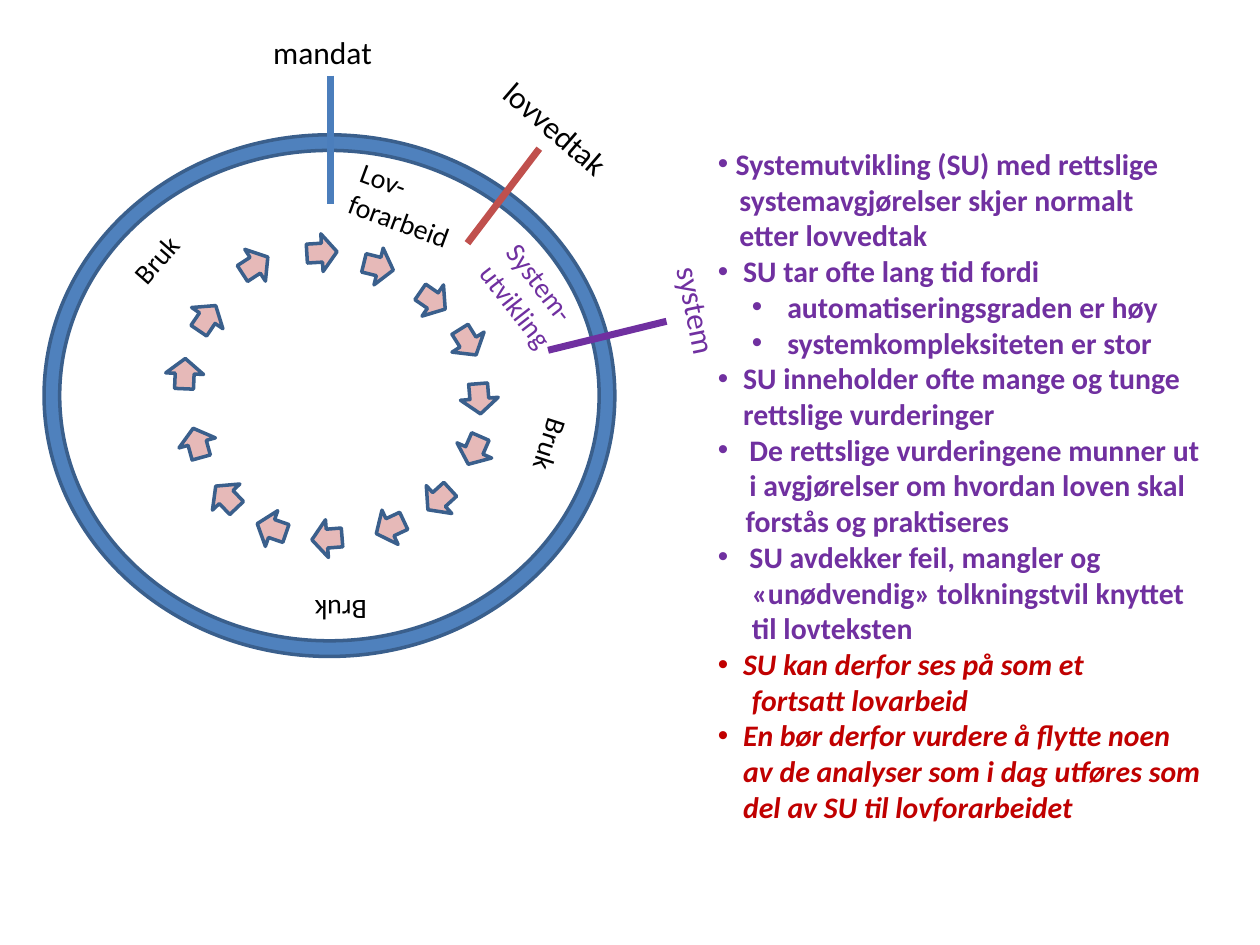
from lxml.etree import SubElement as Sub
from pptx import Presentation
from pptx.dml.color import RGBColor as Rgb
from pptx.enum.shapes import MSO_CONNECTOR as Link, MSO_SHAPE as Kind
from pptx.enum.text import MSO_ANCHOR as Anchor, PP_ALIGN as Align
from pptx.oxml.ns import qn
from pptx.util import Inches, Pt

WIDE, HIGH = Inches(10), Inches(7.5)
COL, ROW = WIDE / 100, HIGH / 75
FONT = "Calibri"
HUES = {
    "white": "FFFFFF", "black": "000000", "blue": "4F81BD", "edge": "3A5F8C",
    "stem": "4B7EBC", "brick": "C0504D", "pink": "E6B9B8",
    "violet": "7030A0", "red": "C00000",
}
ARROWS = [
    (25.55, 20.05, 266.5), (30.05, 21.15, 283.9), (34.35, 23.85, 304.6),
    (37.15, 27.15, 328), (38.05, 31.65, 355.4), (37.65, 35.75, 23.6),
    (34.85, 39.65, 47.5), (30.95, 41.85, 64.9), (25.95, 42.75, 85.5),
    (21.55, 41.95, 109), (17.95, 39.45, 136.4), (15.65, 35.15, 164.6),
    (14.65, 29.65, 182.4), (16.45, 25.25, 214.1), (20.25, 21.05, 237),
]
LINES = [
    (26.2, 6, 26.2, 16.2, "stem"),
    (42.8, 11.8, 37.1, 19.3, "brick"),
    (52.9, 25.5, 43.5, 27.8, "violet"),
]
LABELS = [
    ("mandat", 20.7, 2.1, 9.9, 4, 0, 18, "black"),
    ("lovvedtak", 38.2, 8.2, 11.9, 4, 40.8, 18, "black"),
    ("system", 50.8, 22.7, 9.1, 4, 78.4, 18, "violet"),
    ("Lov-\vforarbeid", 27, 13.1, 10.4, 6.4, 20.3, 16, "black"),
    ("System-\vutvikling", 37.2, 20.3, 9.7, 6.4, 52.1, 16, "violet"),
    ("Bruk", 40.6, 33.5, 6.2, 3.7, 107.8, 16, "black"),
    ("Bruk", 9.3, 18.7, 6.2, 3.7, 311.2, 16, "black"),
    ("Bruk", 23.9, 46.7, 6.2, 3.7, 180, 16, "black"),
]
POINTS = [
    ("Systemutvikling (SU) med rettslige", 1.4, 1.4, "violet"),
    ("systemavgjørelser skjer normalt", 1.7, 0, "violet"),
    ("etter lovvedtak", 1.7, 0, "violet"),
    ("SU tar ofte lang tid fordi", 2, 2, "violet"),
    ("automatiseringsgraden er høy", 5.5, 2.8, "violet"),
    ("systemkompleksiteten er stor", 5.5, 2.8, "violet"),
    ("SU inneholder ofte mange og tunge rettslige vurderinger", 2, 2, "violet"),
    ("De rettslige vurderingene munner ut i avgjørelser om hvordan loven skal",
     2.5, 2.5, "violet"),
    ("forstås og praktiseres", 2.2, 0, "violet"),
    ("SU avdekker feil, mangler og", 2.5, 2.5, "violet"),
    ("«unødvendig» tolkningstvil knyttet", 2.7, 0, "violet"),
    ("til lovteksten", 2.7, 0, "violet"),
    ("SU kan derfor ses på som et", 2, 2, "red"),
    ("fortsatt lovarbeid", 2.7, 0, "red"),
    ("En bør derfor vurdere å flytte noen av de analyser som i dag utføres som "
     "del av SU til lovforarbeidet", 2, 2, "red"),
]


def hue(name):
    """Return the named colour."""
    return Rgb.from_string(HUES[name])


def grid(x, y, w, h):
    """Turn columns and rows into slide lengths."""
    return round(x * COL), round(y * ROW), round(w * COL), round(h * ROW)


def style(para, size, tint):
    """Set the font of a paragraph."""
    para.font.name = FONT
    para.font.size = Pt(size)
    para.font.color.rgb = hue(tint)


def add_form(slide, kind, box, fill, edge=None):
    """Add a filled preset shape."""
    form = slide.shapes.add_shape(kind, *grid(*box))
    form.shadow.inherit = False
    form.fill.solid()
    form.fill.fore_color.rgb = hue(fill)
    if edge:
        form.line.color.rgb = hue(edge)
        form.line.width = Pt(2)
    else:
        form.line.fill.background()
    return form


def add_arrow(slide, x, y, turn):
    """Add one arrow of the cycle about its centre."""
    w, h = 3, 2.4
    box = (x - w / 2, y - h / 2, w, h)
    add_form(slide, Kind.DOWN_ARROW, box, "pink", "edge").rotation = turn


def add_line(slide, x, y, to_x, to_y, tint):
    """Add a milestone line across the ring."""
    line = slide.shapes.add_connector(Link.STRAIGHT, *grid(x, y, to_x, to_y))
    line.line.color.rgb = hue(tint)
    line.line.width = Pt(4)
    Sub(line._element.spPr, qn("a:effectLst"))


def add_label(slide, text, x, y, w, h, turn, size, tint):
    """Add a turned label."""
    box = slide.shapes.add_textbox(*grid(x, y, w, h))
    box.rotation = turn
    box.text_frame.word_wrap = False
    para = box.text_frame.paragraphs[0]
    para.text = text
    style(para, size, tint)


def add_points(slide, box, points):
    """Add the panel of bullet points."""
    frame = add_form(slide, Kind.RECTANGLE, box, "white").text_frame
    frame.word_wrap = True
    frame.vertical_anchor = Anchor.MIDDLE
    for i, (text, left, hang, tint) in enumerate(points):
        para = frame.add_paragraph() if i else frame.paragraphs[0]
        para.text = text
        para.alignment = Align.LEFT
        props = para._p.get_or_add_pPr()
        props.set("marL", str(round(left * COL)))
        props.set("indent", str(round(-hang * COL)))
        if hang:
            Sub(props, qn("a:buFont")).set("typeface", "Arial")
            Sub(props, qn("a:buChar")).set("char", "•")
        style(para, 17, tint)
        para.font.bold = True
        para.font.italic = tint == "red"


def main():
    """Build the slide and save it."""
    deck = Presentation()
    deck.slide_width, deck.slide_height = WIDE, HIGH
    slide = deck.slides.add_slide(deck.slide_layouts[6])
    add_points(slide, (56, 10.8, 40.4, 55.4), POINTS)
    ring = add_form(slide, Kind.DONUT, (3.5, 10.7, 45.3, 41.4), "blue", "edge")
    ring.adjustments[0] = 0.03
    for line in LINES:
        add_line(slide, *line)
    for arrow in ARROWS:
        add_arrow(slide, *arrow)
    for label in LABELS:
        add_label(slide, *label)
    deck.save("out.pptx")


if __name__ == "__main__":
    main()
